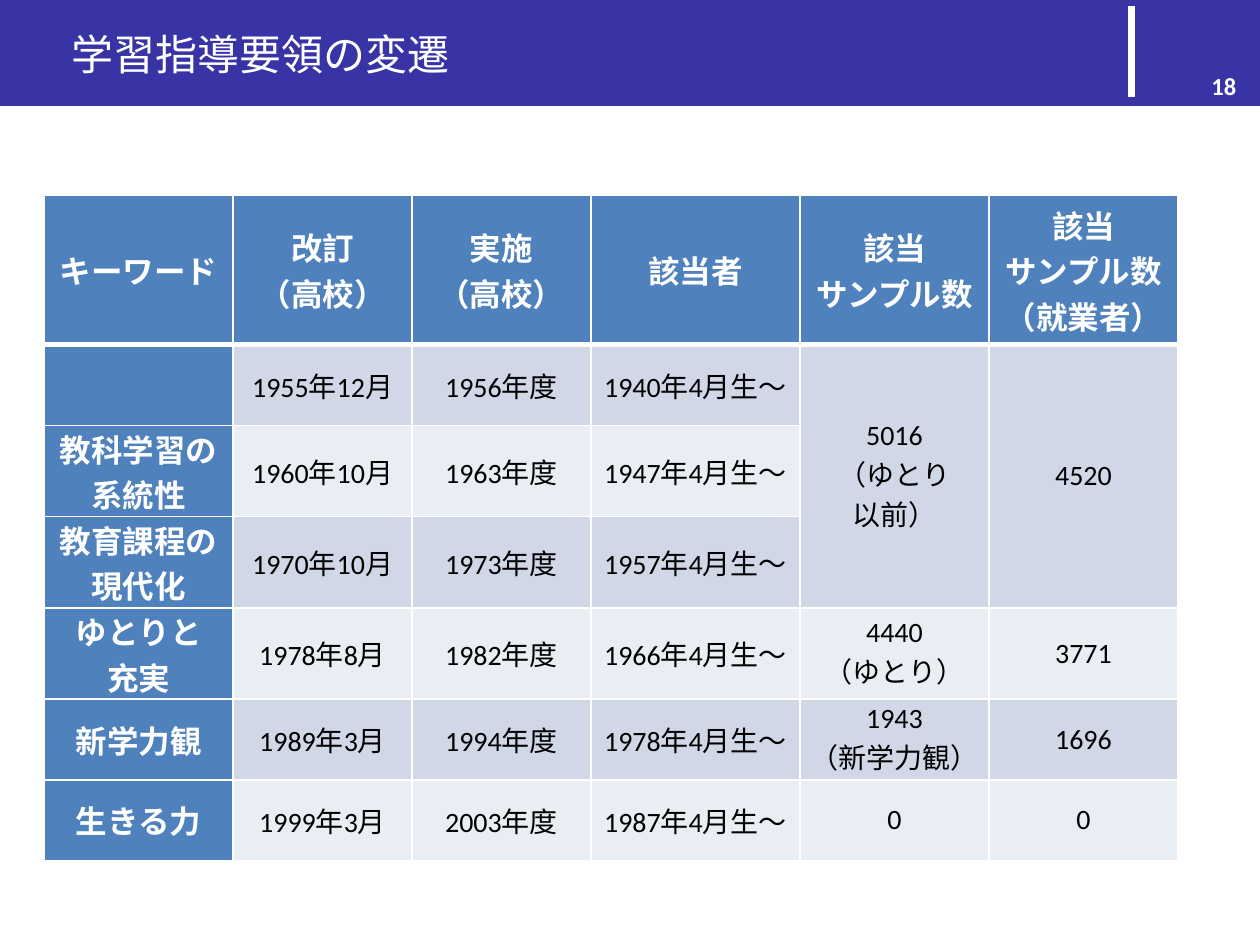
from dataclasses import dataclass

from lxml import etree
from pptx import Presentation
from pptx.dml.color import RGBColor
from pptx.enum.shapes import MSO_CONNECTOR, MSO_SHAPE
from pptx.enum.text import MSO_ANCHOR, PP_ALIGN
from pptx.oxml.ns import qn
from pptx.util import Inches, Pt

RECTANGLE = MSO_SHAPE.RECTANGLE
STRAIGHT = MSO_CONNECTOR.STRAIGHT
MIDDLE = MSO_ANCHOR.MIDDLE
LEFT, CENTER, RIGHT = PP_ALIGN.LEFT, PP_ALIGN.CENTER, PP_ALIGN.RIGHT

BAND, WHITE, BLACK = "3934A6", "FFFFFF", "000000"
HEADING, ROW_DARK, ROW_LIGHT = "4F81BD", "D0D8E8", "E9EDF4"


@dataclass(frozen=True)
class TextStyle:
    size: int
    name: str
    color: str
    bold: bool = False


@dataclass(frozen=True)
class Label:
    text: str
    place: tuple
    style: TextStyle
    align: PP_ALIGN


HEADING_STYLE = TextStyle(18, "Arial", WHITE, True)
SAMPLE_HEADING_STYLE = TextStyle(18, "Calibri", WHITE, True)
BODY_STYLE = TextStyle(16, "Calibri", BLACK)

LABELS = [
    Label("学習指導要領の変遷", (0.47, 0.08, 8.13, 0.7),
          TextStyle(24, "Calibri", WHITE), LEFT),
    Label("18", (7.58, 0.42, 2.33, 0.52),
          TextStyle(14, "Calibri", WHITE, True), RIGHT),
]

COLUMN_WIDTHS = [1.5, 1.42, 1.42, 1.66, 1.5, 1.5]
HEADER_HEIGHT, ROW_HEIGHT = 0.87, 0.63
SAMPLE_COLUMNS = (4, 5)
ROWS = [
    ["キーワード", "改訂\n（高校）", "実施\n（高校）", "該当者",
     "該当\nサンプル数", "該当\nサンプル数\n（就業者）"],
    ["", "1955年12月", "1956年度", "1940年4月生～", "5016\n（ゆとり\n以前）", "4520"],
    ["教科学習の\n系統性", "1960年10月", "1963年度", "1947年4月生～", "", ""],
    ["教育課程の\n現代化", "1970年10月", "1973年度", "1957年4月生～", "", ""],
    ["ゆとりと\n充実", "1978年8月", "1982年度", "1966年4月生～", "4440\n（ゆとり）", "3771"],
    ["新学力観", "1989年3月", "1994年度", "1978年4月生～", "1943\n（新学力観）", "1696"],
    ["生きる力", "1999年3月", "2003年度", "1987年4月生～", "0", "0"],
]


def rgb(value: str) -> RGBColor:
    return RGBColor.from_string(value)


def write_text(frame, text: str, style: TextStyle, align: PP_ALIGN) -> None:
    for index, line in enumerate(text.split("\n")):
        para = frame.add_paragraph() if index else frame.paragraphs[0]
        para.alignment = align
        if not line:
            continue
        span = para.add_run()
        span.text = line
        formats = {"size": Pt(style.size), "name": style.name, "bold": style.bold}
        for attribute, value in formats.items():
            setattr(span.font, attribute, value)
        span.font.color.rgb = rgb(style.color)


def add_band(page, left: float, width: float) -> None:
    band = page.shapes.add_shape(
        RECTANGLE, Inches(left), Inches(0), Inches(width), Inches(0.84))
    band.shadow.inherit = False
    band.fill.solid()
    band.fill.fore_color.rgb = rgb(BAND)
    band.line.fill.background()


def add_divider(page) -> None:
    divider = page.shapes.add_connector(
        STRAIGHT, Inches(8.98), Inches(0.05), Inches(8.98), Inches(0.77))
    divider.line.color.rgb = rgb(WHITE)
    divider.line.width = Pt(3.5)
    etree.SubElement(divider._element.spPr, qn("a:effectLst"))


def add_label(page, label: Label) -> None:
    box = page.shapes.add_textbox(*(Inches(value) for value in label.place))
    frame = box.text_frame
    frame.word_wrap = True
    frame.vertical_anchor = MIDDLE
    write_text(frame, label.text, label.style, label.align)


def set_borders(cell, bottom_width: float) -> None:
    widths = {"a:lnL": 1, "a:lnR": 1, "a:lnT": 1, "a:lnB": bottom_width}
    properties = cell._tc.get_or_add_tcPr()
    for index, (tag, width) in enumerate(widths.items()):
        line = etree.Element(qn(tag), w=str(Pt(width)))
        fill = etree.SubElement(line, qn("a:solidFill"))
        etree.SubElement(fill, qn("a:srgbClr"), val=WHITE)
        properties.insert(index, line)


def format_cell(cell, text: str, row: int, column: int) -> None:
    is_sample_heading = row == 0 and column in SAMPLE_COLUMNS
    if is_sample_heading:
        style = SAMPLE_HEADING_STYLE
    else:
        style = HEADING_STYLE if row == 0 or column == 0 else BODY_STYLE
        margins = {"margin_left": 0.07, "margin_right": 0.07,
                   "margin_top": 0, "margin_bottom": 0}
        for attribute, value in margins.items():
            setattr(cell, attribute, Inches(value))
    if row == 0 or column == 0:
        color = HEADING
    else:
        color = ROW_DARK if row % 2 else ROW_LIGHT
    cell.vertical_anchor = MIDDLE
    cell.fill.solid()
    cell.fill.fore_color.rgb = rgb(color)
    set_borders(cell, 3 if row == 0 else 1)
    write_text(cell.text_frame, text, style, CENTER)


def add_history_table(page) -> None:
    heights = [HEADER_HEIGHT] + [ROW_HEIGHT] * (len(ROWS) - 1)
    table = page.shapes.add_table(
        len(ROWS), len(COLUMN_WIDTHS), Inches(0.35), Inches(1.55),
        Inches(sum(COLUMN_WIDTHS)), Inches(sum(heights))).table
    for column, width in zip(table.columns, COLUMN_WIDTHS):
        column.width = Inches(width)
    for row, height in zip(table.rows, heights):
        row.height = Inches(height)
    for row, texts in enumerate(ROWS):
        for column, text in enumerate(texts):
            format_cell(table.cell(row, column), text, row, column)
    # The first three revisions share one sample count
    for column in SAMPLE_COLUMNS:
        table.cell(1, column).merge(table.cell(3, column))


def main() -> None:
    deck = Presentation()
    deck.slide_width, deck.slide_height = Inches(10), Inches(7.5)
    page = deck.slides.add_slide(deck.slide_layouts[6])

    # Title band
    add_band(page, 0, 7.84)
    add_band(page, 7.84, 2.16)
    add_divider(page)

    # Curriculum history
    add_history_table(page)

    # Title and page number
    for label in LABELS:
        add_label(page, label)

    deck.save("out.pptx")


if __name__ == "__main__":
    main()
